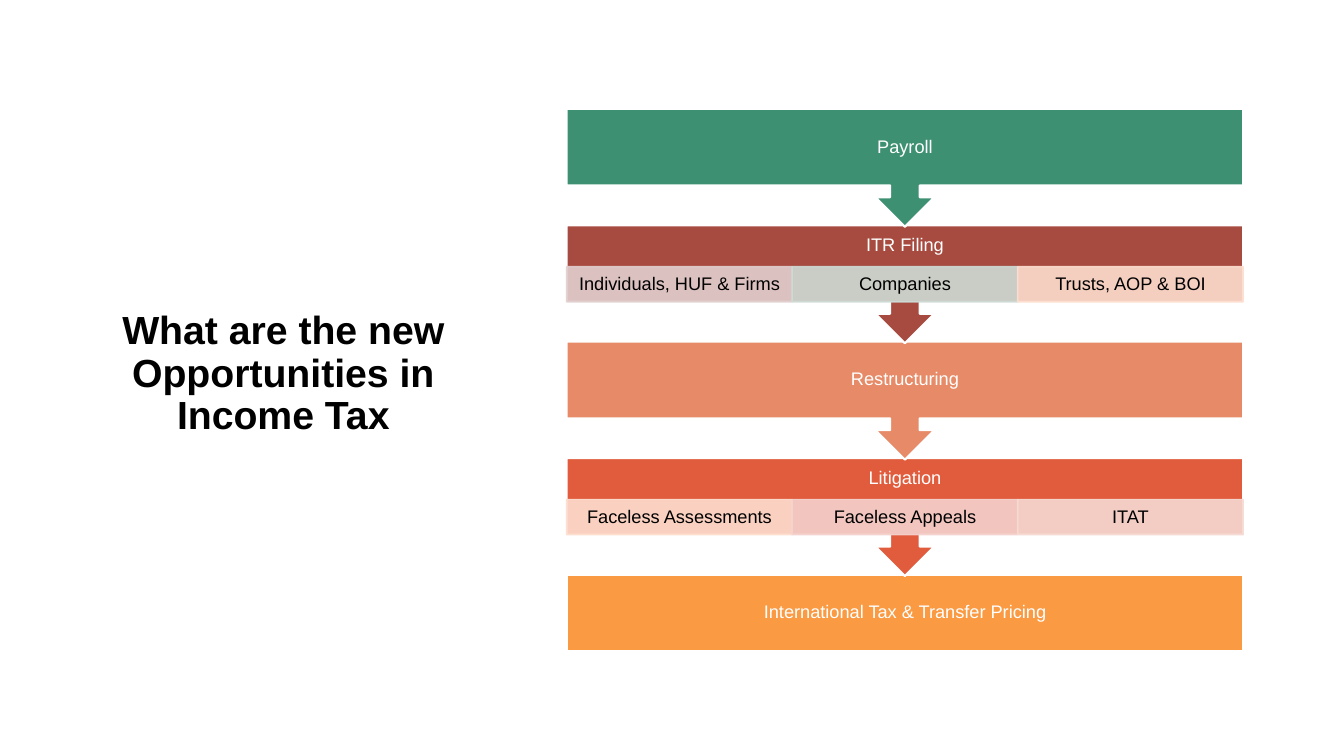
from dataclasses import dataclass

from lxml.etree import SubElement
from pptx import Presentation
from pptx.dml.color import RGBColor
from pptx.enum.shapes import MSO_SHAPE
from pptx.enum.text import MSO_ANCHOR, MSO_AUTO_SIZE, PP_ALIGN
from pptx.oxml.ns import qn
from pptx.util import Inches, Pt


@dataclass(frozen=True)
class Theme:
    font: str = "Arial"
    title_size: int = 28
    label_size: int = 13
    dark: str = "000000"
    light: str = "FFFFFF"
    green: str = "3D9072"
    brick: str = "A74B40"
    salmon: str = "E78A67"
    red: str = "E15C3D"
    orange: str = "FA9A42"
    pale_brick: str = "E1D0CF"
    pale_green: str = "CEDBD5"
    pale_orange: str = "FDDECF"
    pale_rose: str = "F4D2CE"
    pale_red: str = "F6DAD3"


THEME = Theme()

TITLE = "What are the new Opportunities in Income Tax"

# Stage label, colour, and its parts as (label, colour)
STAGES = [
    ("Payroll", THEME.green, []),
    ("ITR Filing", THEME.brick, [
        ("Individuals, HUF & Firms", THEME.pale_brick),
        ("Companies", THEME.pale_green),
        ("Trusts, AOP & BOI", THEME.pale_orange),
    ]),
    ("Restructuring", THEME.salmon, []),
    ("Litigation", THEME.red, [
        ("Faceless Assessments", THEME.pale_orange),
        ("Faceless Appeals", THEME.pale_rose),
        ("ITAT", THEME.pale_red),
    ]),
    ("International Tax & Transfer Pricing", THEME.orange, []),
]

LEFT, WIDTH = 5.62, 6.71
FIRST_TOP, LAST_TOP = 1.08, 5.7
PITCH = (LAST_TOP - FIRST_TOP) / (len(STAGES) - 1)
BOX_HEIGHT, CALLOUT_HEIGHT = 0.76, 1.17
PART_OFFSET, PART_HEIGHT = 0.41, 0.35


def write(tf, text, size, color, bold=False):
    tf.text = text
    tf.word_wrap = True
    tf.vertical_anchor = MSO_ANCHOR.MIDDLE
    p = tf.paragraphs[0]
    p.alignment = PP_ALIGN.CENTER
    p.line_spacing = 0.9
    p.font.name = THEME.font
    p.font.size = Pt(size)
    p.font.bold = bold
    p.font.color.rgb = RGBColor.from_string(color)


def add_title(s):
    title = s.shapes.title
    title.left, title.top = Inches(0.81), Inches(2.17)
    title.width, title.height = Inches(4), Inches(3.15)
    tf = title.text_frame
    write(tf, TITLE, THEME.title_size, THEME.dark, bold=True)
    tf.auto_size = MSO_AUTO_SIZE.NONE
    tf.margin_bottom = Inches(0.11)


def add_block(s, kind, box, text, fill, line, line_width, color):
    sp = s.shapes.add_shape(kind, *map(Inches, box))
    sp.shadow.inherit = False
    sp.fill.solid()
    sp.fill.fore_color.rgb = RGBColor.from_string(fill)
    sp.line.color.rgb = RGBColor.from_string(line)
    sp.line.width = Pt(line_width)
    write(sp.text_frame, text, THEME.label_size, color)
    return sp


def set_opacity(sp, percent):
    """Make both the fill and the outline translucent."""
    for color in sp.element.spPr.iter(qn("a:srgbClr")):
        SubElement(color, qn("a:alpha"), val=str(percent * 1000))


def add_part(s, left, top, width, text, fill):
    sp = add_block(s, MSO_SHAPE.RECTANGLE, (left, top, width, PART_HEIGHT),
                   text, fill, fill, 1, THEME.dark)
    set_opacity(sp, 90)
    tf = sp.text_frame
    tf.margin_left = tf.margin_right = Inches(0.05)
    tf.margin_top = tf.margin_bottom = Inches(0.02)


def add_stage(s, top, text, fill, parts, is_last):
    kind = MSO_SHAPE.RECTANGLE if is_last else MSO_SHAPE.DOWN_ARROW_CALLOUT
    height = BOX_HEIGHT if is_last else CALLOUT_HEIGHT
    sp = add_block(s, kind, (LEFT, top, WIDTH, height), text, fill,
                   THEME.light, 1.5, THEME.light)
    tf = sp.text_frame
    tf.margin_top = Inches(0.1)
    tf.margin_bottom = Inches(0.1 + (PART_HEIGHT if parts else 0))
    for i, (label, color) in enumerate(parts):
        width = WIDTH / len(parts)
        add_part(s, LEFT + i * width, top + PART_OFFSET, width, label, color)


def main():
    prs = Presentation()
    prs.slide_width, prs.slide_height = Inches(13.33), Inches(7.5)
    s = prs.slides.add_slide(prs.slide_layouts[5])
    add_title(s)
    last = len(STAGES) - 1
    # Bottom stage first, so that each arrow tip lies over the stage below
    for i, stage in reversed(list(enumerate(STAGES))):
        add_stage(s, FIRST_TOP + i * PITCH, *stage, is_last=i == last)
    prs.save("out.pptx")


if __name__ == "__main__":
    main()
